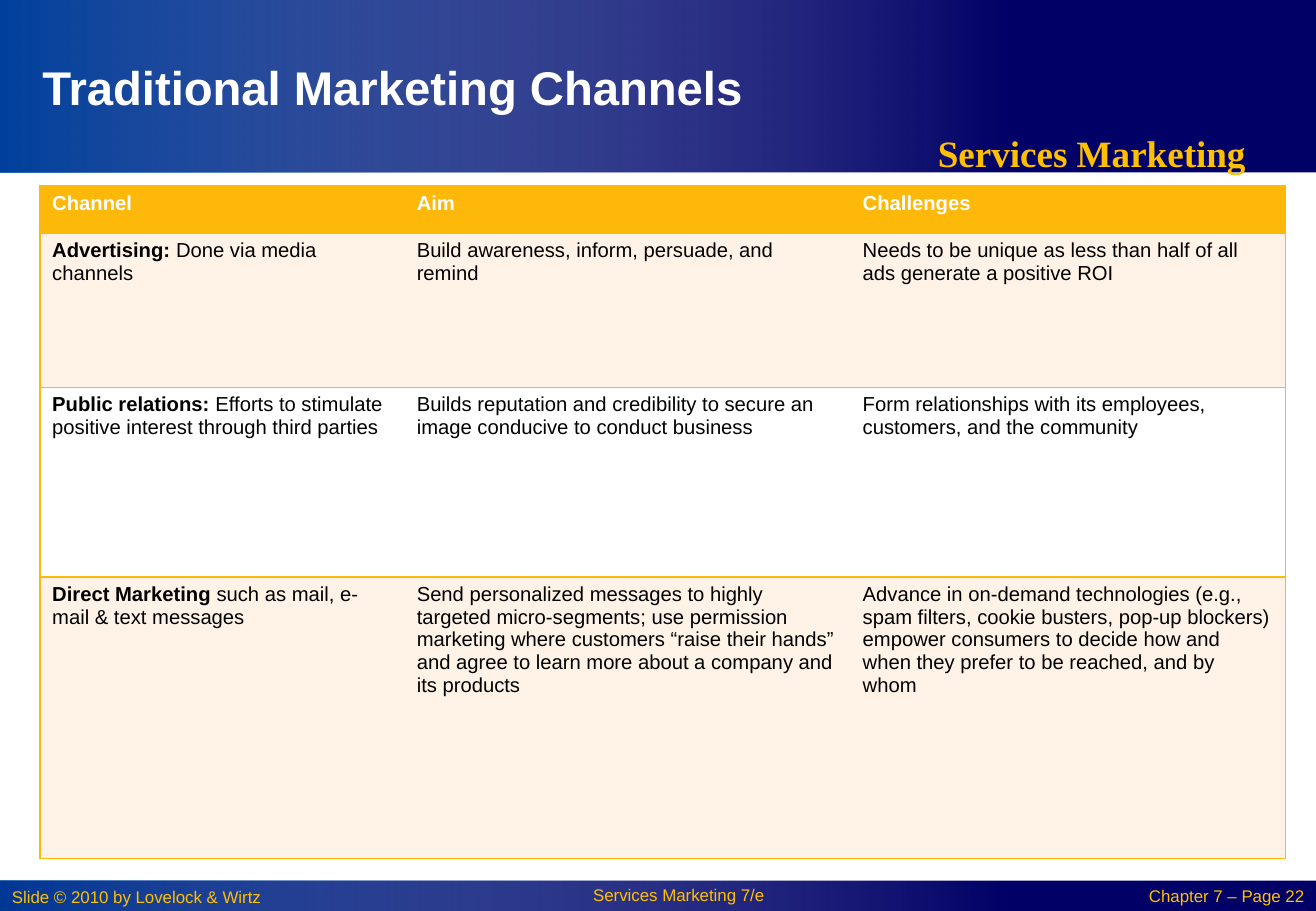
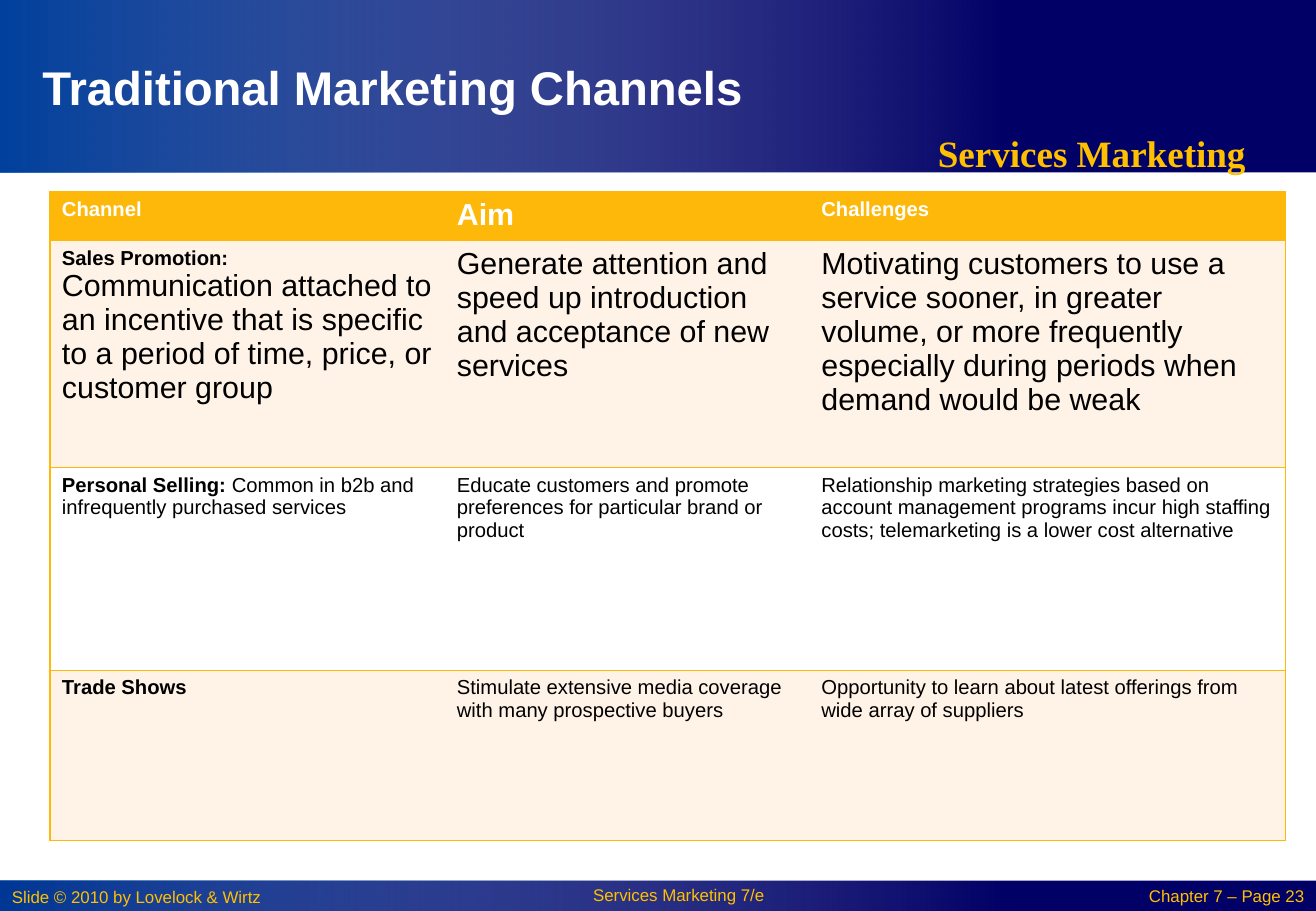
from pptx import Presentation
from pptx.dml.color import RGBColor
from pptx.enum.shapes import MSO_SHAPE
from pptx.enum.text import MSO_ANCHOR, PP_ALIGN
from pptx.oxml.ns import qn
from pptx.util import Inches, Pt
from lxml.etree import SubElement, Element

WIDE, HIGH = 10.83, 7.5
NAVY, BLUE, WHITE, BLACK = "000066", "0152AB", "FFFFFF", "000000"
GOLD, AMBER, CREAM = "FFC000", "FEB80A", "FFF3E7"
TITLE = "Traditional Marketing Channels"
BANDS = [(7.25, 0.25, 69), (0, 1.42, 80)]
SMALL = {"size": 10, "color": GOLD}
LABELS = [
    ("Services Marketing", (7, 0.88, 3.97, 0.62), PP_ALIGN.CENTER, 1.4,
     {"size": 22, "name": "Times New Roman", "color": GOLD, "bold": True}),
    ("Slide © 2010 by Lovelock & Wirtz", (0, 7.25, 2.58, 0.28), PP_ALIGN.LEFT, 1, SMALL),
    ("Services Marketing 7/e", (4.25, 7.25, 2.67, 0.25), PP_ALIGN.CENTER, 0.9, SMALL),
]
HEADS = ["Channel", "Aim", "Challenges"]
SLIDES = [
    {"page": 22, "at": (0.33, 1.53), "aim": 12,
     "cols": [3, 3.67, 3.58], "rows": [0.39, 1.27, 1.56, 2.32],
     "body": [
         (12, "Advertising: ", "Done via media channels",
          "Build awareness, inform, persuade, and remind",
          "Needs to be unique as less than half of all ads generate a positive ROI"),
         (12, "Public relations: ",
          "Efforts to stimulate positive interest through third parties",
          "Builds reputation and credibility to secure an image conducive to conduct business",
          "Form relationships with its employees, customers, and the community"),
         (12, "Direct Marketing ", "such as mail, e-mail & text messages",
          "Send personalized messages to highly targeted micro-segments; use permission "
          "marketing where customers “raise their hands” and agree to learn more about "
          "a company and its products",
          "Advance in on-demand technologies (e.g., spam filters, cookie busters, pop-up "
          "blockers) empower consumers to decide how and when they prefer to be reached, "
          "and by whom"),
     ]},
    {"page": 23, "at": (0.41, 1.58), "aim": 18,
     "cols": [3.25, 3, 3.92], "rows": [0.39, 1.87, 1.67, 1.4],
     "body": [
         (18, "Sales Promotion: ",
          "Communication attached to an incentive that is specific to a period of time, "
          "price, or customer group",
          "Generate attention and speed up introduction and acceptance of new services",
          "Motivating customers to use a service sooner, in greater volume, or more "
          "frequently especially during periods when demand would be weak"),
         (12, "Personal Selling: ", "Common in b2b and infrequently purchased services",
          "Educate customers and promote preferences for particular brand or product",
          "Relationship marketing strategies based on account management programs incur "
          "high staffing costs; telemarketing is a lower cost alternative"),
         (12, "Trade Shows", "",
          "Stimulate extensive media coverage with many prospective buyers",
          "Opportunity to learn about latest offerings from wide array of suppliers"),
     ]},
]


def tint(code):
    return RGBColor.from_string(code)


def place(box):
    return [Inches(v) for v in box]


def write(para, text, form):
    run = para.add_run()
    run.text = text
    for key, val in {"name": "Arial", "bold": False, **form}.items():
        if key == "color":
            run.font.color.rgb = tint(val)
        else:
            setattr(run.font, key, Pt(val) if key == "size" else val)


def label(slide, text, box, align, space, form, anchor=MSO_ANCHOR.TOP):
    frame = slide.shapes.add_textbox(*place(box)).text_frame
    frame.word_wrap = True
    frame.vertical_anchor = anchor
    para = frame.paragraphs[0]
    para.alignment, para.line_spacing = align, space
    write(para, text, form)


def block(slide, box):
    shape = slide.shapes.add_shape(MSO_SHAPE.RECTANGLE, *place(box))
    shape.shadow.inherit = False
    shape.line.fill.background()
    return shape


def band(slide, top, high, alpha):
    base = block(slide, (0, top, WIDE, high))
    base.fill.solid()
    base.fill.fore_color.rgb = tint(NAVY)
    glow = block(slide, (0, top, 8.33, high))
    glow.fill.gradient()
    glow.fill.gradient_angle = 0
    for stop, code in zip(glow.fill.gradient_stops, (BLUE, WHITE)):
        stop.color.rgb = tint(code)
    for node, part in zip(glow._element.spPr.iter(qn("a:srgbClr")), (alpha, 0)):
        SubElement(node, qn("a:alpha"), val=str(part * 1000))


def edge(cell, sides):
    props = cell._tc.get_or_add_tcPr()
    for i, side in enumerate("LRTB"):
        line = Element(qn("a:ln" + side), w=str(Pt(1)))
        if side in sides:
            fill = SubElement(line, qn("a:solidFill"))
            SubElement(fill, qn("a:srgbClr"), val=AMBER)
        else:
            SubElement(line, qn("a:noFill"))
        props.insert(i, line)


def grid(slide, data):
    cols, rows = data["cols"], data["rows"]
    box = (*data["at"], sum(cols), sum(rows))
    table = slide.shapes.add_table(len(rows), len(cols), *place(box)).table
    for col, wide in zip(table.columns, cols):
        col.width = Inches(wide)
    for row, high in zip(table.rows, rows):
        row.height = Inches(high)
    sizes = [12, data["aim"], 12]
    lines = [[[(text, size, True)] for text, size in zip(HEADS, sizes)]]
    for size, lead, rest, *more in data["body"]:
        first = [(lead, 12, True)] + ([(rest, size, False)] if rest else [])
        lines.append([first] + [[(text, size, False)] for text in more])
    for r, line in enumerate(lines):
        back = AMBER if r == 0 else CREAM if r % 2 else WHITE
        for c, runs in enumerate(line):
            cell = table.cell(r, c)
            cell.fill.solid()
            cell.fill.fore_color.rgb = tint(back)
            edge(cell, "TB" + {0: "L", len(cols) - 1: "R"}.get(c, ""))
            for text, size, bold in runs:
                write(cell.text_frame.paragraphs[0], text,
                      {"size": size, "bold": bold, "color": BLACK if r else WHITE})


def main():
    deck = Presentation()
    deck.slide_width, deck.slide_height = place((WIDE, HIGH))
    for data in SLIDES:
        slide = deck.slides.add_slide(deck.slide_layouts[6])
        for item in BANDS:
            band(slide, *item)
        for item in LABELS:
            label(slide, *item)
        label(slide, f"Chapter 7 – Page {data['page']}", (9.08, 7.26, 1.75, 0.25),
              PP_ALIGN.RIGHT, 0.9, SMALL)
        label(slide, TITLE, (0.25, 0.25, 7, 0.92), PP_ALIGN.LEFT, 1,
              {"size": 28, "bold": True, "color": WHITE}, MSO_ANCHOR.MIDDLE)
        grid(slide, data)
    deck.save("out.pptx")


if __name__ == "__main__":
    main()
